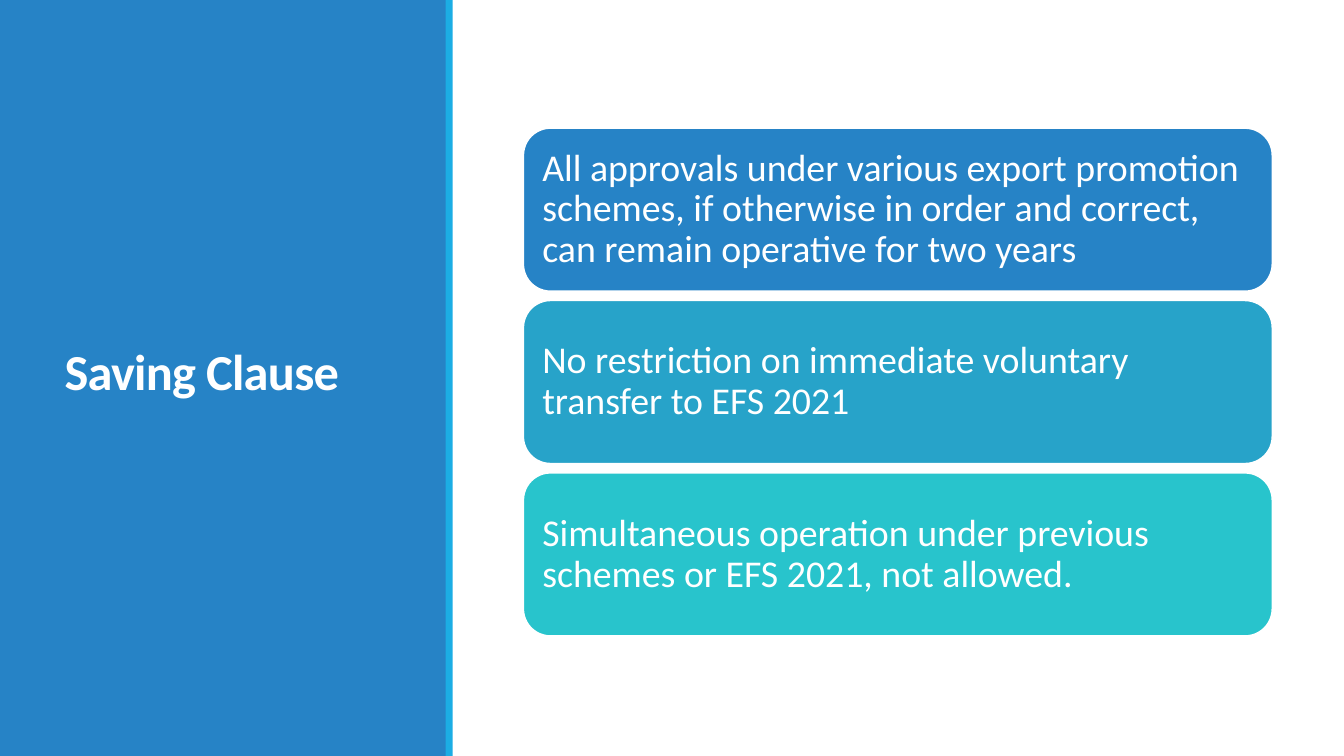
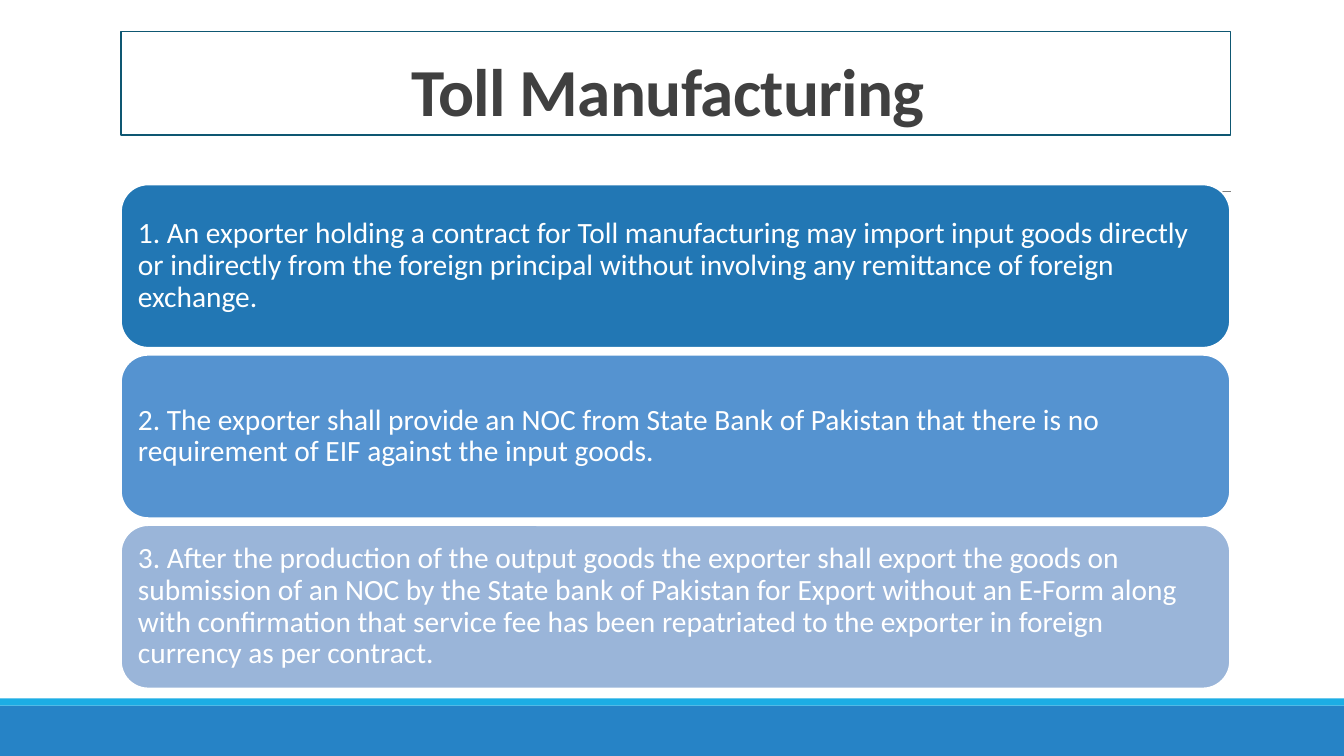
import pptx
import pptx.util
import pptx.dml.color
import pptx.enum.shapes
import pptx.enum.text
import pptx.oxml
import pptx.oxml.ns

Inches = pptx.util.Inches
Pt = pptx.util.Pt
Anchor = pptx.enum.text.MSO_ANCHOR
Align = pptx.enum.text.PP_ALIGN
Preset = pptx.enum.shapes.MSO_SHAPE

SLIDE_W, SLIDE_H = 13.33, 7.5
FONT = "Calibri"
BLUE, SKY, WHITE = "2683C6", "1CADE4", "FFFFFF"
DARK, NAVY, GREY = "404040", "0E5772", "808080"
STRIPE = 0.07
CARD_H = 1.62


def color(hex_value):
    """Turn a hex string into a colour."""
    return pptx.dml.color.RGBColor.from_string(hex_value)


def add_block(slide, box, fill, preset=Preset.RECTANGLE):
    """Add a filled shape without outline or shadow."""
    block = slide.shapes.add_shape(preset, *map(Inches, box))
    block.shadow.inherit = False
    block.fill.solid()
    block.fill.fore_color.rgb = color(fill)
    block.line.fill.background()
    return block


def set_text(shape, text, size, ink, spacing, align=Align.LEFT, bold=False):
    """Write one formatted paragraph into a shape."""
    frame = shape.text_frame
    frame.word_wrap = True
    frame.auto_size = pptx.enum.text.MSO_AUTO_SIZE.NONE
    frame.text = text
    paragraph = frame.paragraphs[0]
    paragraph.alignment = align
    paragraph.line_spacing = spacing
    font = paragraph.runs[0].font
    font.name, font.size, font.bold = FONT, Pt(size), bold
    font.color.rgb = color(ink)


def place_title(slide, box, text, size, ink, anchor, align=Align.LEFT):
    """Place the title in its box, in front of what is already drawn."""
    title = slide.shapes.title
    title.left, title.top, title.width, title.height = map(Inches, box)
    set_text(title, text, size, ink, 0.85, align, bold=True)
    title.text_frame.vertical_anchor = anchor
    for properties in title.element.iter(pptx.oxml.ns.qn("a:rPr")):
        properties.set("spc", "-50")
    slide.shapes.element.append(title.element)
    return title


def add_cards(slide, left, top, width, gap, cards, size, inset):
    """Stack rounded cards downwards from a top left corner."""
    for index, (fill, text) in enumerate(cards):
        box = (left, top + index * (CARD_H + gap), width, CARD_H)
        card = add_block(slide, box, fill, Preset.ROUNDED_RECTANGLE)
        card.line.color.rgb = color(WHITE)
        card.line.width = Pt(1.25)
        set_text(card, text, size, WHITE, 0.9)
        frame = card.text_frame
        frame.vertical_anchor = Anchor.MIDDLE
        frame.margin_left = frame.margin_right = Inches(inset)
        frame.margin_top = frame.margin_bottom = Inches(inset)


def add_footer(slide, top):
    """Add the footer band with its stripe above."""
    add_block(slide, (0, top, SLIDE_W, SLIDE_H - top), BLUE)
    add_block(slide, (0, top - STRIPE, SLIDE_W, STRIPE), SKY)


def add_rule(slide, left, right, y):
    """Add the thin grey rule under the title."""
    rule = slide.shapes.add_connector(
        pptx.enum.shapes.MSO_CONNECTOR.STRAIGHT,
        Inches(left), Inches(y), Inches(right), Inches(y))
    rule.line.color.rgb = color(GREY)
    rule.line.width = Pt(0.5)
    rule.element.spPr.append(pptx.oxml.parse_xml(
        f"<a:effectLst {pptx.oxml.ns.nsdecls('a')}/>"))


def build_side_title_slide(slide, title, cards):
    """Build a slide with a title panel on the left and cards on the right."""
    panel_w = 4.43
    add_block(slide, (0, 0, panel_w, SLIDE_H), BLUE)
    add_block(slide, (panel_w - 0.01, 0, STRIPE, SLIDE_H), SKY)
    place_title(slide, (0.54, 0.57, 3.37, 6.31), title, 36, WHITE, Anchor.MIDDLE)
    add_cards(slide, 5.19, 1.27, 7.43, 0.09, cards, 27, 0.11)


def build_top_title_slide(slide, title, cards):
    """Build a slide with a framed title above full-width cards."""
    left, width = 1.2, 11
    add_footer(slide, 7)
    add_rule(slide, 1.31, 12.21, 1.9)
    heading = place_title(slide, (left, 0.31, width, 1.03), title, 48, DARK,
                          Anchor.BOTTOM, Align.CENTER)
    heading.line.color.rgb = color(NAVY)
    heading.line.width = Pt(0.75)
    add_cards(slide, left, 1.83, width, 0.07, cards, 21, 0.09)


SAVING_CARDS = [
    (BLUE, "All approvals under various export promotion schemes, if otherwise "
           "in order and correct, can remain operative for two years"),
    ("27A3C9", "No restriction on immediate voluntary transfer to EFS 2021"),
    ("28C4CC", "Simultaneous operation under previous schemes or EFS 2021, "
               "not allowed."),
]
TOLL_CARDS = [
    ("2277B4", "1. An exporter holding a contract for Toll manufacturing may "
               "import input goods directly or indirectly from the foreign "
               "principal without involving any remittance of foreign exchange."),
    ("5593D0", "2. The exporter shall provide an NOC from State Bank of Pakistan "
               "that there is no requirement of EIF against the input goods."),
    ("9AB5D9", "3. After the production of the output goods the exporter shall "
               "export the goods on submission of an NOC by the State bank of "
               "Pakistan for Export without an E-Form along with confirmation "
               "that service fee has been repatriated to the exporter in foreign "
               "currency as per contract."),
]


def main():
    """Build both slides and save the presentation."""
    deck = pptx.Presentation()
    deck.slide_width, deck.slide_height = Inches(SLIDE_W), Inches(SLIDE_H)
    title_only = deck.slide_layouts[5]
    for build, title, cards in (
            (build_side_title_slide, "Saving Clause", SAVING_CARDS),
            (build_top_title_slide, "Toll Manufacturing ", TOLL_CARDS)):
        build(deck.slides.add_slide(title_only), title, cards)
    deck.save("out.pptx")


if __name__ == "__main__":
    main()
